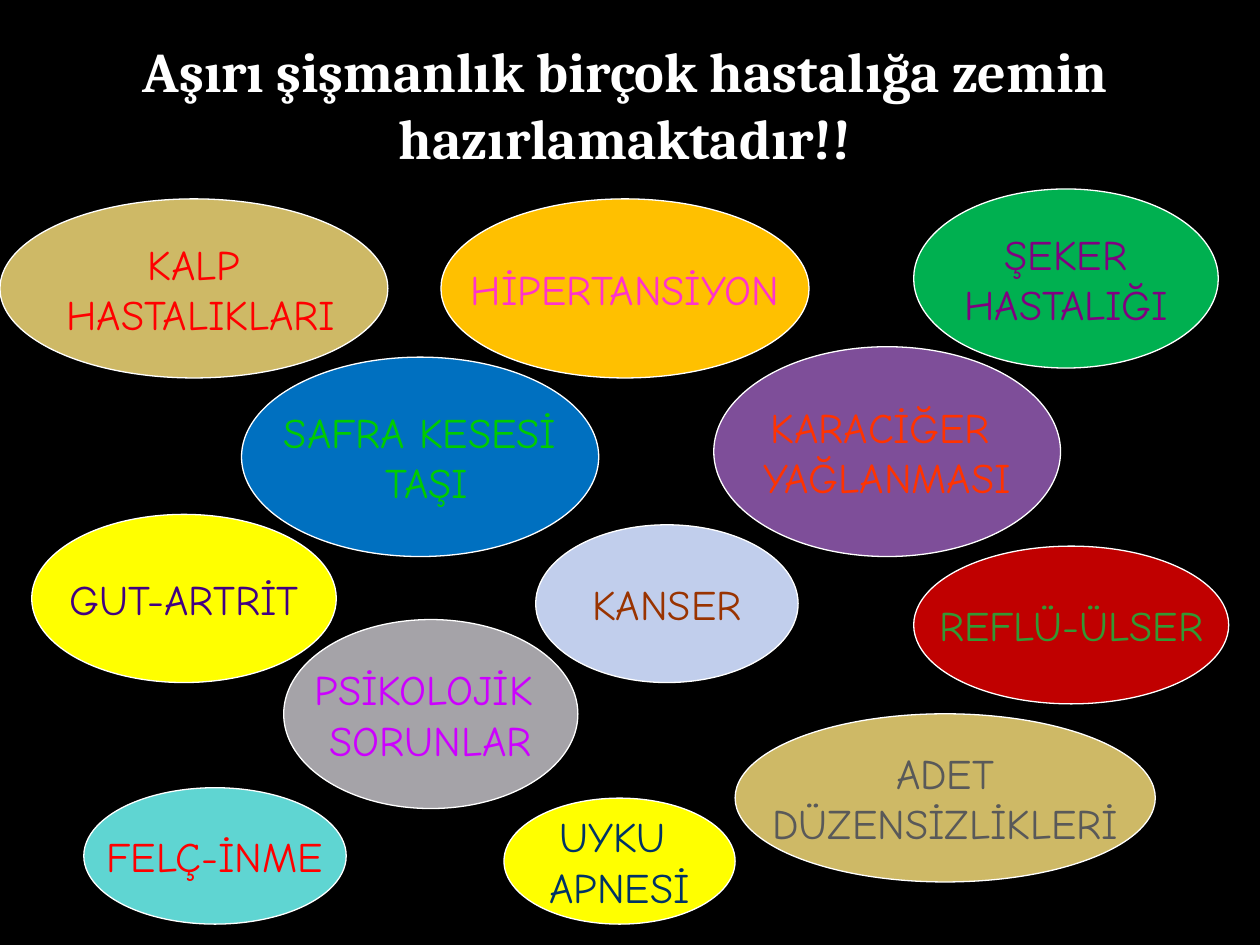
from pptx import Presentation
from pptx.dml.color import RGBColor
from pptx.enum.shapes import MSO_SHAPE
from pptx.enum.text import MSO_ANCHOR, MSO_AUTO_SIZE, PP_ALIGN
from pptx.util import Cm, Pt


def colour(hex_code):
    return RGBColor.from_string(hex_code)


class DiseaseSlide:
    title_format = {"name": "Cambria", "size": Pt(32), "bold": True}
    disease_format = {"name": "Comic Neue", "size": Pt(24)}
    title_frame = {"word_wrap": True, "auto_size": MSO_AUTO_SIZE.SHAPE_TO_FIT_TEXT}
    disease_frame = {"word_wrap": False, "vertical_anchor": MSO_ANCHOR.MIDDLE}
    outline = "FFFFFF"

    def __init__(self, presentation, background):
        self.slide = presentation.slides.add_slide(presentation.slide_layouts[6])
        fill = self.slide.background.fill
        fill.solid()
        fill.fore_color.rgb = colour(background)

    def label(self, frame, lines, text_colour, frame_format, font_format):
        for attribute, value in frame_format.items():
            setattr(frame, attribute, value)
        frame.text = "\n".join(lines)
        for paragraph in frame.paragraphs:
            paragraph.alignment = PP_ALIGN.CENTER
            font = paragraph.runs[0].font
            font.color.rgb = colour(text_colour)
            for attribute, value in font_format.items():
                setattr(font, attribute, value)

    def title(self, bounds, text, text_colour):
        heading = self.slide.shapes.add_textbox(*map(Cm, bounds))
        self.label(heading.text_frame, [text], text_colour,
                   self.title_frame, self.title_format)

    def disease(self, bounds, fill_colour, text_colour, *lines):
        bubble = self.slide.shapes.add_shape(MSO_SHAPE.OVAL, *map(Cm, bounds))
        bubble.shadow.inherit = False
        bubble.fill.solid()
        bubble.fill.fore_color.rgb = colour(fill_colour)
        bubble.line.color.rgb = colour(self.outline)
        bubble.line.width = Pt(0.75)
        self.label(bubble.text_frame, lines, text_colour,
                   self.disease_frame, self.disease_format)


DISEASES = [
    ((0, 4.01, 7.82, 3.61), "CEB966", "FF0000", "KALP", " HASTALIKLARI"),
    ((8.89, 4.01, 7.42, 3.61), "FFC000", "FF33CC", "HİPERTANSİYON"),
    ((18.42, 3.81, 6.14, 3.61), "00B050", "800080", "ŞEKER", "HASTALIĞI"),
    ((4.87, 7.2, 7.2, 4.02), "0070C0", "00CC00", "SAFRA KESESİ", " TAŞI"),
    ((14.39, 6.99, 6.99, 4.23), "7E4E99", "FF3300", "KARACİĞER ", "YAĞLANMASI"),
    ((0.64, 10.37, 6.14, 3.39), "FFFF00", "410082", "GUT-ARTRİT"),
    ((10.8, 10.58, 5.29, 3.18), "C1CEEC", "993300", "KANSER"),
    ((18.42, 11.01, 6.35, 3.18), "C00000", "339933", "REFLÜ-ÜLSER"),
    ((5.72, 12.49, 5.93, 3.81), "A5A3A8", "CC00FF", "PSİKOLOJİK ", "SORUNLAR"),
    ((14.82, 14.39, 8.47, 3.39), "CEB966", "595959", "ADET", "DÜZENSİZLİKLERİ"),
    ((1.69, 15.88, 5.29, 2.75), "5FD5D2", "FF0000", "FELÇ-İNME"),
    ((10.16, 16.09, 4.66, 2.54), "FFFF00", "003366", "UYKU ", "APNESİ"),
]


def main():
    presentation = Presentation()
    presentation.slide_width = Cm(25.4)
    presentation.slide_height = Cm(19.05)
    obesity = DiseaseSlide(presentation, "000000")
    obesity.title((0.71, 0.61, 23.8, 3),
                  "Aşırı şişmanlık birçok hastalığa zemin hazırlamaktadır!!", "FFFFFF")
    for disease in DISEASES:
        obesity.disease(*disease)
    presentation.save("out.pptx")


if __name__ == "__main__":
    main()
